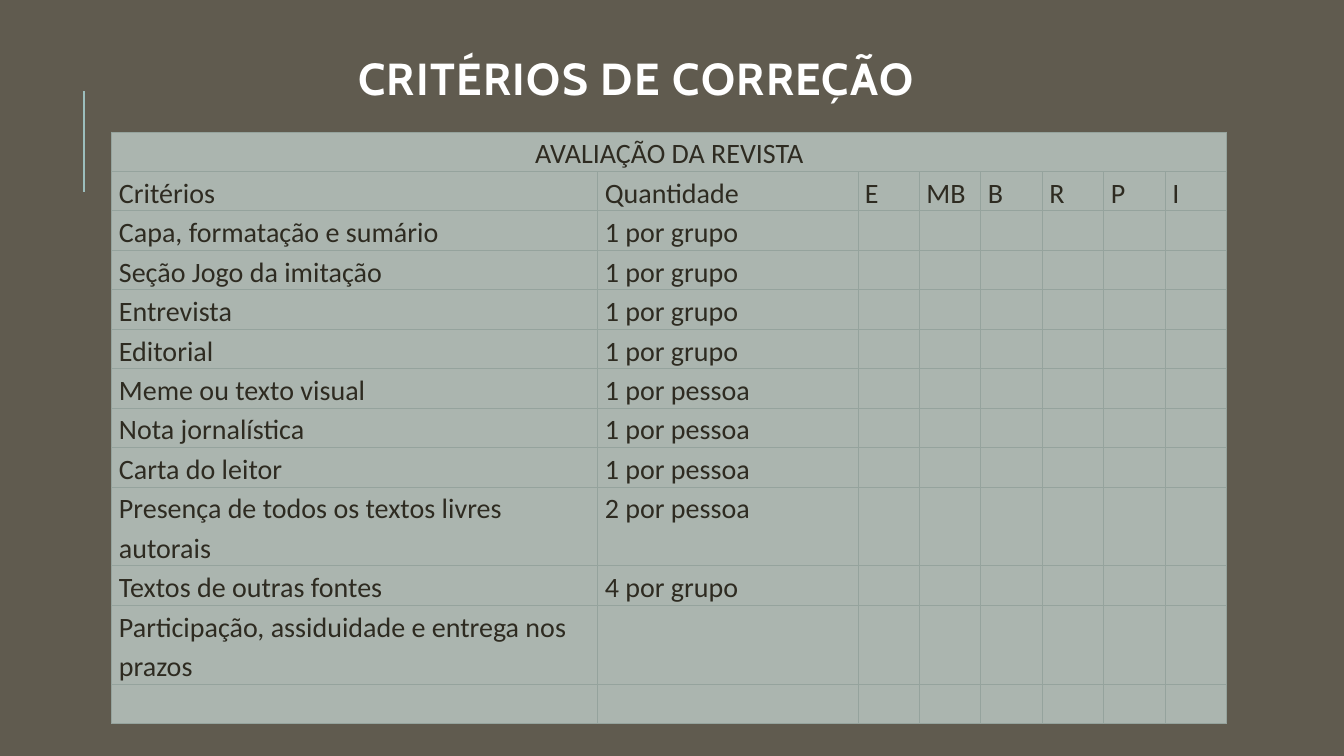
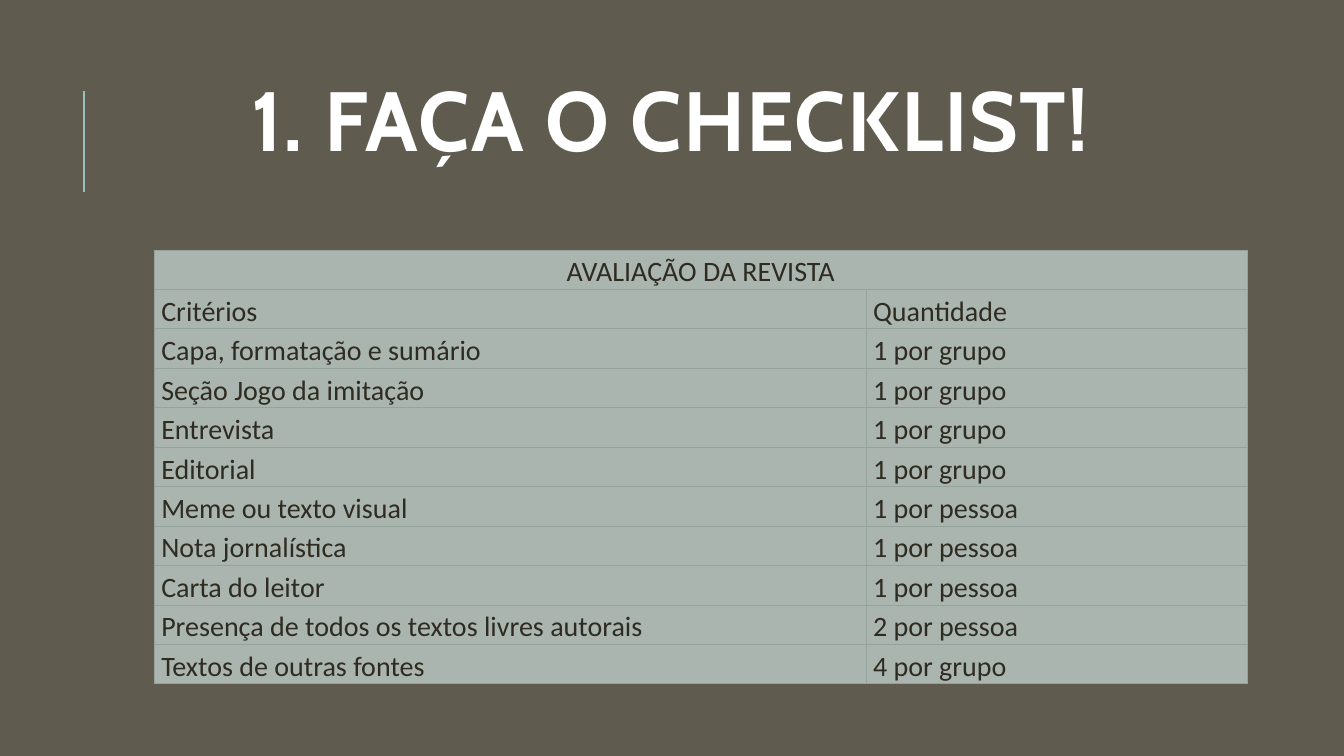
from dataclasses import dataclass

from lxml import etree
from pptx import Presentation
from pptx import util as u
from pptx.dml import color
from pptx.enum import shapes, text
from pptx.oxml import ns


@dataclass(frozen=True)
class Theme:
    background: str = "605B4F"
    accent: str = "9CBEBD"
    title: str = "FFFFFF"
    cell: str = "ABB5AF"
    border: str = "95A39D"
    ink: str = "2E2B21"
    title_font: str = "Cabin"
    body_font: str = "Calibri"
    body_size: int = 20
    row_height: float = 0.39


THEME = Theme()
TABLE_TITLE = "AVALIAÇÃO DA REVISTA"
GRADES = ["E", "MB", "B", "R", "P", "I"]
CRITERIA = [
    ("Critérios", "Quantidade"),
    ("Capa, formatação e sumário", "1 por grupo"),
    ("Seção Jogo da imitação", "1 por grupo"),
    ("Entrevista", "1 por grupo"),
    ("Editorial", "1 por grupo"),
    ("Meme ou texto visual", "1 por pessoa"),
    ("Nota jornalística", "1 por pessoa"),
    ("Carta do leitor", "1 por pessoa"),
    ("Presença de todos os textos livres autorais", "2 por pessoa"),
    ("Textos de outras fontes", "4 por grupo"),
]
PARTICIPATION = ("Participação, assiduidade e entrega nos prazos", "")


def rgb(value):
    return color.RGBColor.from_string(value)


def apply_format(target, values):
    for name, value in values.items():
        setattr(target, name, value)


def format_run(run, font_color, values):
    apply_format(run.font, values)
    run.font.color.rgb = rgb(font_color)


def style_master(presentation, slide):
    master = presentation.slide_master
    master.background.fill.solid()
    master.background.fill.fore_color.rgb = rgb(THEME.background)
    line = slide.shapes.add_connector(
        shapes.MSO_CONNECTOR.STRAIGHT,
        u.Inches(0.83), u.Inches(1.9), u.Inches(0.83), u.Inches(0.9),
    )
    line.line.color.rgb = rgb(THEME.accent)
    line.line.width = u.Pt(1.5)
    etree.SubElement(line.element.spPr, ns.qn("a:effectLst"))
    master.element.cSld.spTree.append(line.element)


def set_title(slide, words, left, top, size):
    title = slide.shapes.title
    apply_format(title, {
        "left": u.Inches(left), "top": u.Inches(top),
        "width": u.Inches(11.94), "height": u.Inches(1.64),
    })
    apply_format(title.text_frame, {
        "text": words, "word_wrap": True,
        "vertical_anchor": text.MSO_ANCHOR.MIDDLE,
        "auto_size": text.MSO_AUTO_SIZE.NONE,
    })
    paragraph = title.text_frame.paragraphs[0]
    apply_format(paragraph, {"alignment": text.PP_ALIGN.CENTER, "line_spacing": 0.8})
    run = paragraph.runs[0]
    format_run(run, THEME.title, {
        "name": THEME.title_font, "size": u.Pt(size), "bold": True,
    })
    run.font._element.set("spc", "100")


def add_borders(cell):
    properties = cell._tc.get_or_add_tcPr()
    for side in ("lnL", "lnR", "lnT", "lnB"):
        border = etree.SubElement(properties, ns.qn(f"a:{side}"), w=str(u.Pt(0.75)))
        fill = etree.SubElement(border, ns.qn("a:solidFill"))
        etree.SubElement(fill, ns.qn("a:srgbClr"), val=THEME.border)


def fill_cell(cell, words, alignment):
    add_borders(cell)
    cell.fill.solid()
    cell.fill.fore_color.rgb = rgb(THEME.cell)
    apply_format(cell, {
        "margin_left": u.Inches(0.07), "margin_right": u.Inches(0.07),
        "margin_top": 0, "margin_bottom": 0,
    })
    paragraph = cell.text_frame.paragraphs[0]
    apply_format(paragraph, {"alignment": alignment, "line_spacing": 1.15})
    if words:
        run = paragraph.add_run()
        run.text = words
        format_run(run, THEME.ink, {
            "name": THEME.body_font, "size": u.Pt(THEME.body_size), "bold": False,
        })


def add_criteria_table(slide, left, top, widths, body, two_line_rows=()):
    rows = [[TABLE_TITLE], *body]
    heights = [
        THEME.row_height * (2 if row[0] in two_line_rows else 1) for row in rows
    ]
    table = slide.shapes.add_table(
        len(rows), len(widths), u.Inches(left), u.Inches(top),
        u.Inches(sum(widths)), u.Inches(sum(heights)),
    ).table
    apply_format(table, {"first_row": False, "horz_banding": False})
    for column, width in zip(table.columns, widths):
        column.width = u.Inches(width)
    for row, height in zip(table.rows, heights):
        row.height = u.Inches(height)
    for row_index, row in enumerate(rows):
        alignment = text.PP_ALIGN.LEFT if row_index else text.PP_ALIGN.CENTER
        for column_index in range(len(widths)):
            words = row[column_index] if column_index < len(row) else ""
            fill_cell(table.cell(row_index, column_index), words, alignment)
    table.cell(0, 0).merge(table.cell(0, len(widths) - 1))


def main():
    presentation = Presentation()
    apply_format(presentation, {
        "slide_width": u.Inches(13.33), "slide_height": u.Inches(7.5),
    })
    title_only = presentation.slide_layouts.get_by_name("Title Only")

    grading = presentation.slides.add_slide(title_only)
    style_master(presentation, grading)
    set_title(grading, "CRITÉRIOS DE CORREÇÃO", 0.34, 0, 32)
    header, *criteria = CRITERIA
    add_criteria_table(
        grading, 1.11, 1.31, [4.82, 2.58] + [0.61] * len(GRADES),
        [[*header, *GRADES], *criteria, PARTICIPATION, [""]],
        two_line_rows=(CRITERIA[8][0], PARTICIPATION[0]),
    )

    checklist = presentation.slides.add_slide(title_only)
    set_title(checklist, "1. FAÇA O CHECKLIST!", 0.68, 0.44, 60)
    add_criteria_table(checklist, 1.53, 2.48, [7.06, 3.78], CRITERIA)

    presentation.save("out.pptx")


if __name__ == "__main__":
    main()
